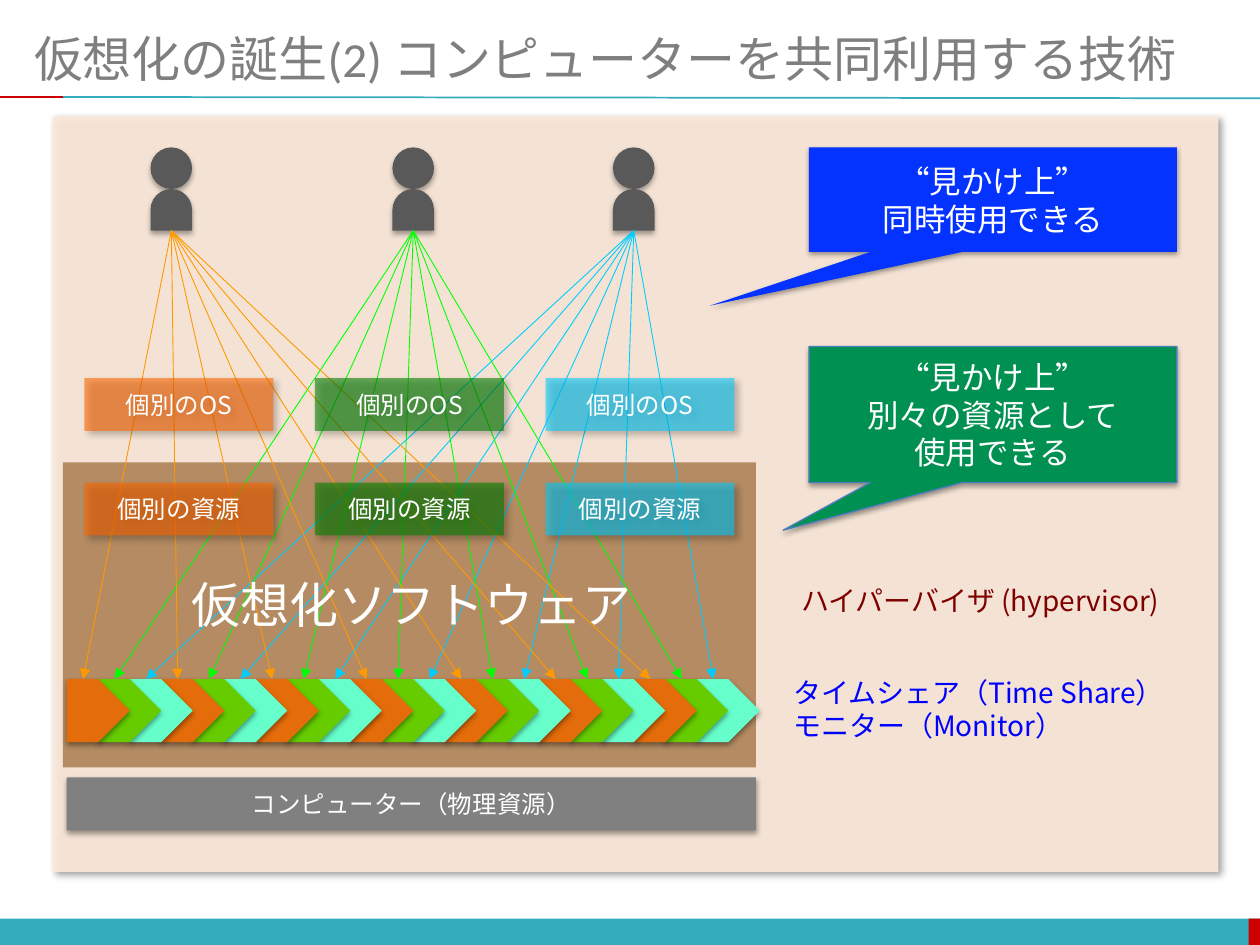
from lxml.etree import SubElement
from pptx import Presentation
from pptx.dml.color import RGBColor
from pptx.enum.shapes import MSO_CONNECTOR, MSO_SHAPE as SHAPE
from pptx.enum.text import MSO_ANCHOR as ANCHOR, MSO_AUTO_SIZE as AUTO, PP_ALIGN as ALIGN
from pptx.oxml.ns import qn
from pptx.util import Inches, Pt

CJK = "Noto Sans CJK JP"
TITLE = "仮想化の誕生(2) コンピューターを共同利用する技術"
# user centre, line colour, time slice colour, virtual machine colour
USERS = [
    (1.36, "FF9900", "E46C0A", "FF6600"),
    (3.28, "00FF00", "66CC00", "008000"),
    (5.03, "00CCFF", "66FFCC", "00CCFF"),
]
VIRTUAL_ROWS = [("個別の資源", 3.83), ("個別のOS", 3)]
# lines, box, tail position, fill, outline
CALLOUTS = [
    (["“見かけ上”", "同時使用できる"], (6.42, 1.17, 2.92, 0.83), (-0.769, 1.014), "0432FF", None),
    (["“見かけ上”", "別々の資源として", "使用できる"], (6.42, 2.75, 2.92, 1.08), (-0.57, 0.85),
     "009051", "4B7EBC"),
]
# lines, box, size, colour, alignment
LABELS = [
    (["タイムシェア（Time Share）", "モニター（Monitor）"], (6.2, 5.31, 3.25, 0.64), 16, "0000FF", ALIGN.LEFT),
    (["仮想化ソフトウェア"], (1.42, 4.51, 3.74, 0.57), 28, "FFFFFF", ALIGN.LEFT),
    (["ハイパーバイザ (hypervisor)"], (6.17, 4.58, 3.22, 0.37), 16, "800000", ALIGN.CENTER),
]
SLICE_COUNT, SLICE_LEFT, SLICE_TOP, SLICE_SIZE, SLICE_STEP = 21, 0.53, 5.39, 0.5, 0.25
HEAD_TOP, HEAD_SIZE = 1.17, 0.33
USER_BOTTOM = 1.83

# opacity %, blur pt, distance pt, direction degrees
SOFT = (40, 4, 3, 45)
DROP = (38, 3.1, 1.6, 90)
USER_SHADOW = (35, 3.1, 1.8, 90)


def rgb(color):
    return RGBColor.from_string(color)


def add_box(parent, kind, box, fill, opacity=100, shadow=None, outline=None):
    shape = parent.add_shape(kind, *map(Inches, box))
    shape.fill.solid()
    shape.fill.fore_color.rgb = rgb(fill)
    if opacity < 100:
        color = shape.fill._xPr.find(qn("a:solidFill"))[0]
        SubElement(color, qn("a:alpha"), val=str(opacity * 1000))
    if outline:
        shape.line.color.rgb = rgb(outline)
        shape.line.width = Pt(0.75)
    else:
        shape.line.fill.background()
    shape.shadow.inherit = False
    if shadow:
        alpha, blur, distance, direction = shadow
        effects = shape._element.spPr.find(qn("a:effectLst"))
        outer = SubElement(effects, qn("a:outerShdw"), blurRad=str(Pt(blur)), dist=str(Pt(distance)),
                           dir=str(direction * 60000), algn="ctr", rotWithShape="0")
        color = SubElement(outer, qn("a:srgbClr"), val="000000")
        SubElement(color, qn("a:alpha"), val=str(alpha * 1000))
    return shape


def write(shape, lines, size, color="FFFFFF", align=ALIGN.CENTER, latin=CJK, wrap=True):
    frame = shape.text_frame
    frame.word_wrap = wrap
    for number, line in enumerate(lines):
        paragraph = frame.add_paragraph() if number else frame.paragraphs[0]
        paragraph.alignment = align
        run = paragraph.add_run()
        run.text = line
        run.font.size = Pt(size)
        run.font.name = latin
        run.font.color.rgb = rgb(color)
        SubElement(run._r.rPr, qn("a:ea"), typeface=CJK)


def add_line(shapes, start, end, color, width, arrow=False):
    line = shapes.add_connector(MSO_CONNECTOR.STRAIGHT, *map(Inches, start + end))
    line.line.color.rgb = rgb(color)
    line.line.width = Pt(width)
    if arrow:
        SubElement(line.line._get_or_add_ln(), qn("a:headEnd"), type="triangle")
    SubElement(line._element.spPr, qn("a:effectLst"))


def add_user(shapes, center):
    group = shapes.add_group_shape().shapes
    left = center - HEAD_SIZE / 2
    add_box(group, SHAPE.OVAL, (left, HEAD_TOP, HEAD_SIZE, HEAD_SIZE), "595959", shadow=USER_SHADOW)
    body = add_box(group, SHAPE.FLOWCHART_DELAY, (left, HEAD_TOP + HEAD_SIZE, HEAD_SIZE, HEAD_SIZE),
                   "595959", shadow=USER_SHADOW)
    body.rotation = 270


def main():
    prs = Presentation()
    prs.slide_width, prs.slide_height = Inches(10), Inches(7.5)
    slide = prs.slides.add_slide(prs.slide_layouts[5])
    shapes = slide.shapes

    title = shapes.title
    title.left, title.top, title.width, title.height = map(Inches, (0.17, 0.17, 9.83, 0.58))
    title.text_frame.vertical_anchor = ANCHOR.MIDDLE
    title.text_frame.auto_size = AUTO.NONE
    write(title, [TITLE], 28, "7F7F7F", ALIGN.LEFT, latin="Calibri")

    add_box(shapes, SHAPE.RECTANGLE, (0, 7.29, 10, 0.22), "33ACBD")
    add_box(shapes, SHAPE.RECTANGLE, (9.91, 7.29, 0.1, 0.22), "CC0000")
    add_line(shapes, (0.5, 0.77), (10, 0.78), "33ACBD", 1)
    add_line(shapes, (0, 0.77), (0.5, 0.77), "CC0000", 1)

    add_box(shapes, SHAPE.RECTANGLE, (0.42, 0.92, 9.25, 6), "FDEADA", 90, SOFT)
    hypervisor = add_box(shapes, SHAPE.ROUNDED_RECTANGLE, (0.5, 3.67, 5.5, 2.42), "996633", 70)
    hypervisor.adjustments[0] = 0

    for index in reversed(range(SLICE_COUNT)):
        slice_color = USERS[index % len(USERS)][2]
        add_box(shapes, SHAPE.PENTAGON,
                (SLICE_LEFT + index * SLICE_STEP, SLICE_TOP, SLICE_SIZE, SLICE_SIZE),
                slice_color, shadow=DROP)
    for center, *_ in USERS:
        add_user(shapes, center)
    for index in range(SLICE_COUNT):
        center, line_color, *_ = USERS[index % len(USERS)]
        add_line(shapes, (SLICE_LEFT + 0.13 + index * SLICE_STEP, SLICE_TOP),
                 (center, USER_BOTTOM), line_color, 0.5, arrow=True)

    computer = add_box(shapes, SHAPE.RECTANGLE, (0.53, 6.17, 5.47, 0.42), "808080", shadow=DROP)
    write(computer, ["コンピューター（物理資源）"], 14)
    for name, top in VIRTUAL_ROWS:
        for column, (*_, machine_color) in enumerate(USERS):
            machine = add_box(shapes, SHAPE.RECTANGLE, (0.67 + column * 1.83, top, 1.5, 0.42),
                              machine_color, 58, SOFT)
            write(machine, [name], 14)

    for lines, box, tail, fill, outline in CALLOUTS:
        callout = add_box(shapes, SHAPE.RECTANGULAR_CALLOUT, box, fill, shadow=DROP, outline=outline)
        callout.adjustments[0], callout.adjustments[1] = tail
        write(callout, lines, 18)

    for lines, box, size, color, align in LABELS:
        label = shapes.add_textbox(*map(Inches, box))
        label.text_frame.auto_size = AUTO.SHAPE_TO_FIT_TEXT
        write(label, lines, size, color, align, wrap=False)

    prs.save("out.pptx")


if __name__ == "__main__":
    main()
